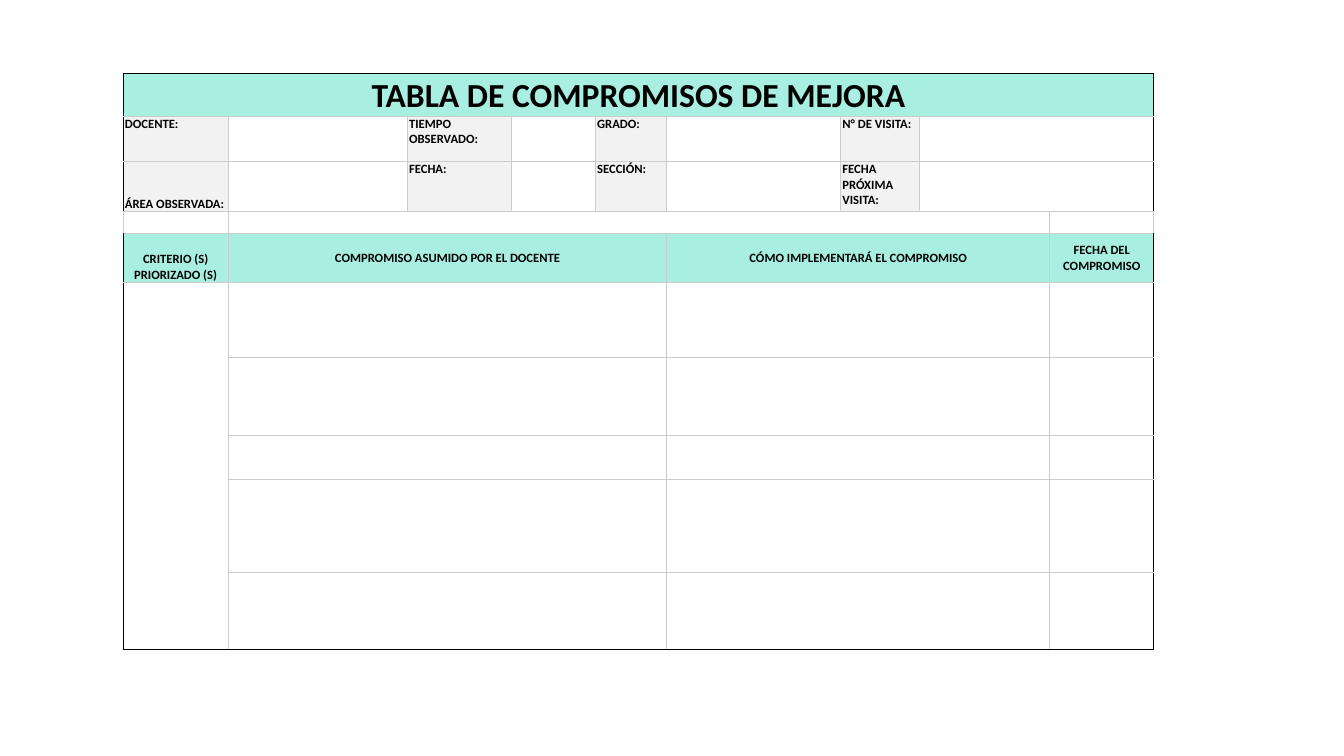
from lxml.etree import SubElement
from pptx import Presentation
from pptx.dml.color import RGBColor
from pptx.enum.text import MSO_ANCHOR, PP_ALIGN
from pptx.oxml.ns import qn
from pptx.util import Cm, Pt

MINT, GRAY, WHITE = "A8EEE1", "F2F2F2", "FFFFFF"
BLACK, LINE = "000000", "CCCCCC"
TOP, MIDDLE, BOTTOM = MSO_ANCHOR.TOP, MSO_ANCHOR.MIDDLE, MSO_ANCHOR.BOTTOM


def color(hex_value):
    return RGBColor.from_string(hex_value)


def draw_border(cell, side, hex_value):
    line = SubElement(cell._tc.get_or_add_tcPr(), qn(f"a:ln{side}"), w=str(Pt(0.75)))
    fill = SubElement(line, qn("a:solidFill"))
    SubElement(fill, qn("a:srgbClr"), val=hex_value)


presentation = Presentation()
presentation.slide_width, presentation.slide_height = Cm(33.87), Cm(19.05)
slide = presentation.slides.add_slide(presentation.slide_layouts[6])

# Grid
widths = [2.65, 4.51, 2.63, 2.11, 1.8, 4.38, 2.0, 3.27, 2.63]
heights = [1.08, 1.14, 1.25, 0.56, 1.23, 1.9, 1.95, 1.11, 2.34, 1.95]
last_row, last_column = len(heights) - 1, len(widths) - 1
spacer_row, header_row = 3, 4
commitments = slide.shapes.add_table(
    len(heights), len(widths), Cm(3.1), Cm(1.86), Cm(sum(widths)), Cm(sum(heights))
).table
commitments.first_row = commitments.horz_banding = False
no_style = "{2D5ABB26-0587-4C30-8999-92F81FD0307C}"
commitments._tbl.tblPr.find(qn("a:tableStyleId")).text = no_style
for column, width in zip(commitments.columns, widths):
    column.width = Cm(width)
for row, height in zip(commitments.rows, heights):
    row.height = Cm(height)

# Merged areas: first row, first column, last row, last column
merges = [(0, 0, 0, 8), (1, 7, 1, 8), (2, 7, 2, 8), (3, 1, 3, 7), (5, 0, 9, 0)]
for row in range(header_row, last_row + 1):
    merges += [(row, 1, row, 4), (row, 5, row, 7)]
for top, left, bottom, right in merges:
    commitments.cell(top, left).merge(commitments.cell(bottom, right))

# Texts: wording, fill, anchor, alignment, size
texts = {(0, 0): ("TABLA DE COMPROMISOS DE MEJORA", MINT, BOTTOM, PP_ALIGN.CENTER, 24)}
labels = [
    ["DOCENTE:", "TIEMPO OBSERVADO:", "GRADO:", "N° DE VISITA:"],
    ["ÁREA OBSERVADA:", "FECHA:", "SECCIÓN:", "FECHA PRÓXIMA VISITA:"],
]
for row, row_labels in enumerate(labels, start=1):
    for index, label in enumerate(row_labels):
        anchor = BOTTOM if label == "ÁREA OBSERVADA:" else TOP
        texts[row, index * 2] = (label, GRAY, anchor, PP_ALIGN.LEFT, 9)
headings = [
    (0, "CRITERIO (S) PRIORIZADO (S)", BOTTOM),
    (1, "COMPROMISO ASUMIDO POR EL DOCENTE", MIDDLE),
    (5, "CÓMO IMPLEMENTARÁ EL COMPROMISO", MIDDLE),
    (8, "FECHA DEL COMPROMISO", MIDDLE),
]
for column, heading, anchor in headings:
    texts[header_row, column] = (heading, MINT, anchor, PP_ALIGN.CENTER, 9)

# Cells: black outer frame, broken at the spacer row
for row in range(last_row + 1):
    for column in range(last_column + 1):
        cell = commitments.cell(row, column)
        if cell.is_spanned:
            continue
        end_row = row + (cell.span_height if cell.is_merge_origin else 1) - 1
        end_column = column + (cell.span_width if cell.is_merge_origin else 1) - 1
        framed = row != spacer_row
        outer = {
            "L": framed and column == 0,
            "R": framed and end_column == last_column,
            "T": row == 0,
            "B": end_row == last_row,
        }
        for side, is_outer in outer.items():
            draw_border(cell, side, BLACK if is_outer else LINE)
        cell.margin_left = cell.margin_right = Cm(0.05)
        cell.margin_top = cell.margin_bottom = Cm(0)
        paragraph = cell.text_frame.paragraphs[0]
        if (row, column) not in texts:
            cell.fill.background()
            SubElement(paragraph._p, qn("a:endParaRPr"), sz="900")
            continue
        wording, fill, anchor, alignment, size = texts[row, column]
        cell.fill.solid()
        cell.fill.fore_color.rgb = color(fill)
        cell.vertical_anchor = anchor
        paragraph.alignment = alignment
        run = paragraph.add_run()
        run.text = wording
        run.font.name, run.font.size, run.font.bold = "Calibri", Pt(size), True
        run.font.color.rgb = color(BLACK)

# White row among the commitments
for column in (1, 5, 8):
    white_cell = commitments.cell(7, column)
    white_cell.fill.solid()
    white_cell.fill.fore_color.rgb = color(WHITE)

presentation.save("out.pptx")
